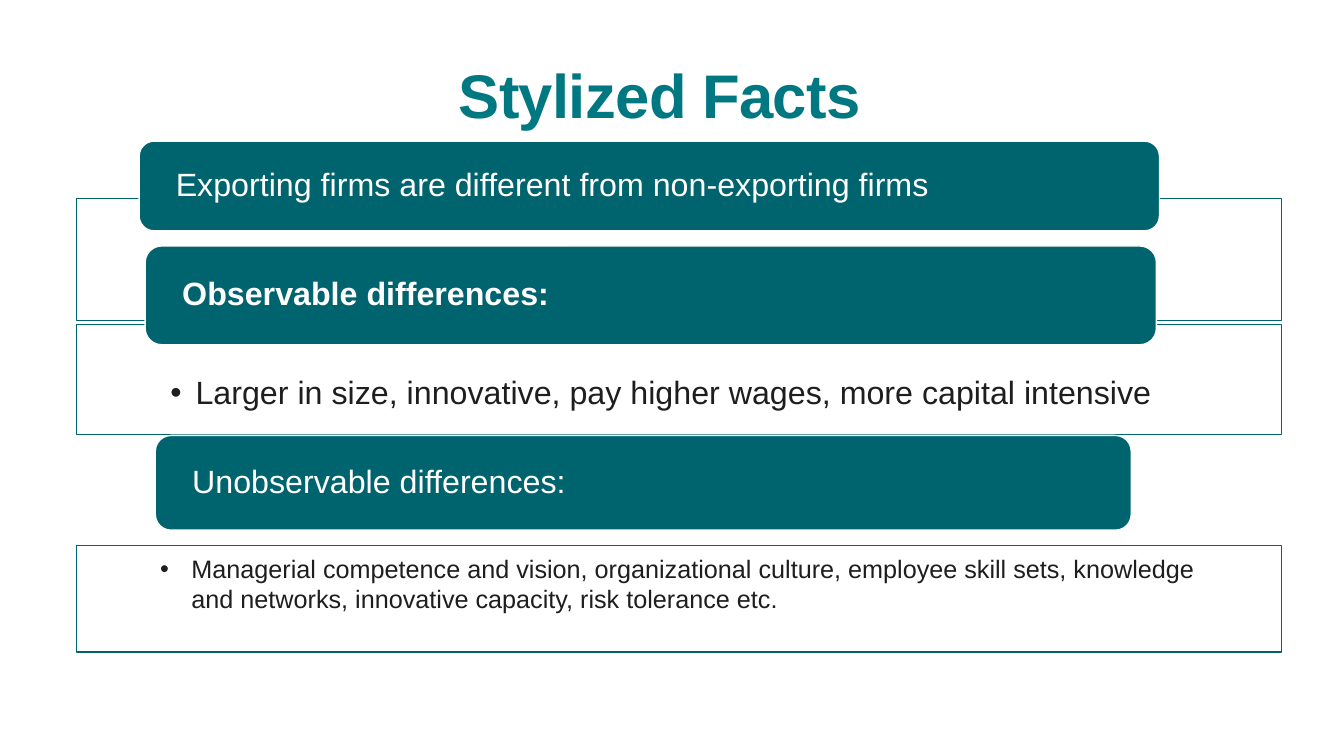
from dataclasses import dataclass

from lxml import etree
from pptx import Presentation
from pptx.dml.color import RGBColor
from pptx.enum import shapes, text
from pptx.oxml import ns
from pptx.util import Inches, Pt


@dataclass(frozen=True)
class Theme:
    font: str = "Arial"
    teal: str = "00646E"
    title_teal: str = "007882"
    ink: str = "1E1E1E"
    white: str = "FFFFFF"
    title_size: int = 44
    fact_size: int = 23
    detail_size: int = 18
    panel_opacity: int = 90


@dataclass(frozen=True)
class Words:
    content: str
    size: int
    color: str
    bold: bool = False
    margins: tuple[float, float, float, float] = (0.1, 0.05, 0.1, 0.05)
    anchor: text.MSO_ANCHOR = text.MSO_ANCHOR.TOP
    line_spacing: float = 0.9
    bullet_indent: float = 0
    level: int = 0
    tracking: float = 0


@dataclass(frozen=True)
class Box:
    left: float
    top: float
    width: float
    height: float
    words: Words | None = None

    def lengths(self) -> list[int]:
        return [Inches(n) for n in (self.left, self.top, self.width, self.height)]


@dataclass(frozen=True)
class Fact:
    panel: Box
    heading: Box


THEME = Theme()


def heading_words(content: str, bold: bool = False) -> Words:
    return Words(content, THEME.fact_size, THEME.white, bold,
                 (0.32, 0, 0.32, 0), text.MSO_ANCHOR.MIDDLE)


def panel_box(top: float, height: float, words: Words | None = None) -> Box:
    return Box(0.76, top, 11.95, height, words)


def write(shape, words: Words) -> None:
    frame = shape.text_frame
    left, top, right, bottom = (Inches(n) for n in words.margins)
    frame_format = {
        "word_wrap": True, "vertical_anchor": words.anchor,
        "margin_left": left, "margin_top": top,
        "margin_right": right, "margin_bottom": bottom,
    }
    for name, value in frame_format.items():
        setattr(frame, name, value)

    paragraph = frame.paragraphs[0]
    paragraph.alignment = text.PP_ALIGN.LEFT
    paragraph.line_spacing = words.line_spacing
    paragraph.level = words.level
    if words.bullet_indent:
        properties = paragraph._p.get_or_add_pPr()
        indent = Inches(words.bullet_indent)
        properties.set("marL", str(indent))
        properties.set("indent", str(-indent))
        etree.SubElement(properties, ns.qn("a:buFont")).set("typeface", THEME.font)
        etree.SubElement(properties, ns.qn("a:buChar")).set("char", "•")

    run = paragraph.add_run()
    run.text = words.content
    font_format = {"name": THEME.font, "size": Pt(words.size), "bold": words.bold}
    for name, value in font_format.items():
        setattr(run.font, name, value)
    run.font.color.rgb = RGBColor.from_string(words.color)
    if words.tracking:
        run._r.get_or_add_rPr().set("spc", str(round(words.tracking * 100)))


def draw_shape(slide, kind: shapes.MSO_SHAPE, box: Box, fill: str, line: str):
    shape = slide.shapes.add_shape(kind, *box.lengths())
    shape.shadow.inherit = False
    shape.fill.solid()
    shape.fill.fore_color.rgb = RGBColor.from_string(fill)
    shape.line.color.rgb = RGBColor.from_string(line)
    shape.line.width = Pt(1)
    if box.words:
        write(shape, box.words)
    return shape


def draw_fact(slide, fact: Fact) -> None:
    panel = draw_shape(slide, shapes.MSO_SHAPE.RECTANGLE, fact.panel,
                       THEME.white, THEME.teal)
    fill_color = panel._element.spPr.find(ns.qn("a:solidFill"))[0]
    etree.SubElement(fill_color, ns.qn("a:alpha")).set(
        "val", str(THEME.panel_opacity * 1000))
    draw_shape(slide, shapes.MSO_SHAPE.ROUNDED_RECTANGLE, fact.heading,
               THEME.teal, THEME.white)


def draw_text(slide, box: Box) -> None:
    write(slide.shapes.add_textbox(*box.lengths()), box.words)


OBSERVABLE = Words(
    "Larger in size, innovative, pay higher wages, more capital intensive",
    THEME.fact_size, THEME.ink, margins=(0.93, 0.52, 0.93, 0.18),
    bullet_indent=0.25, level=1)

FACTS = [
    Fact(panel_box(1.97, 1.21),
         Box(1.38, 1.4, 10.12, 0.89,
             heading_words("Exporting firms are different from non-exporting firms"))),
    Fact(panel_box(3.22, 1.09, OBSERVABLE),
         Box(1.44, 2.44, 10.03, 0.98,
             heading_words("Observable differences:", bold=True))),
    Fact(panel_box(5.41, 1.06),
         Box(1.54, 4.32, 9.68, 0.94, heading_words("Unobservable differences:"))),
]

TITLE = Box(4.55, 0.6, 4.24, 0.85, Words(
    "Stylized Facts", THEME.title_size, THEME.title_teal, True,
    margins=(0, 0.05, 0.1, 0.05), tracking=-0.5))

UNOBSERVABLE = Box(1.49, 5.44, 10.71, 0.71, Words(
    "Managerial competence and vision, organizational culture, employee skill sets, "
    "knowledge and networks, innovative capacity, risk tolerance etc.",
    THEME.detail_size, THEME.ink, line_spacing=1.0, bullet_indent=0.31))


def main() -> None:
    deck = Presentation()
    deck.slide_width, deck.slide_height = Inches(13.33), Inches(7.5)
    slide = deck.slides.add_slide(deck.slide_layouts[6])

    # Facts: outlined panels with overlapping headings
    for fact in FACTS:
        draw_fact(slide, fact)

    # Title and the detail below the last heading
    for box in (TITLE, UNOBSERVABLE):
        draw_text(slide, box)

    deck.save("out.pptx")


if __name__ == "__main__":
    main()
